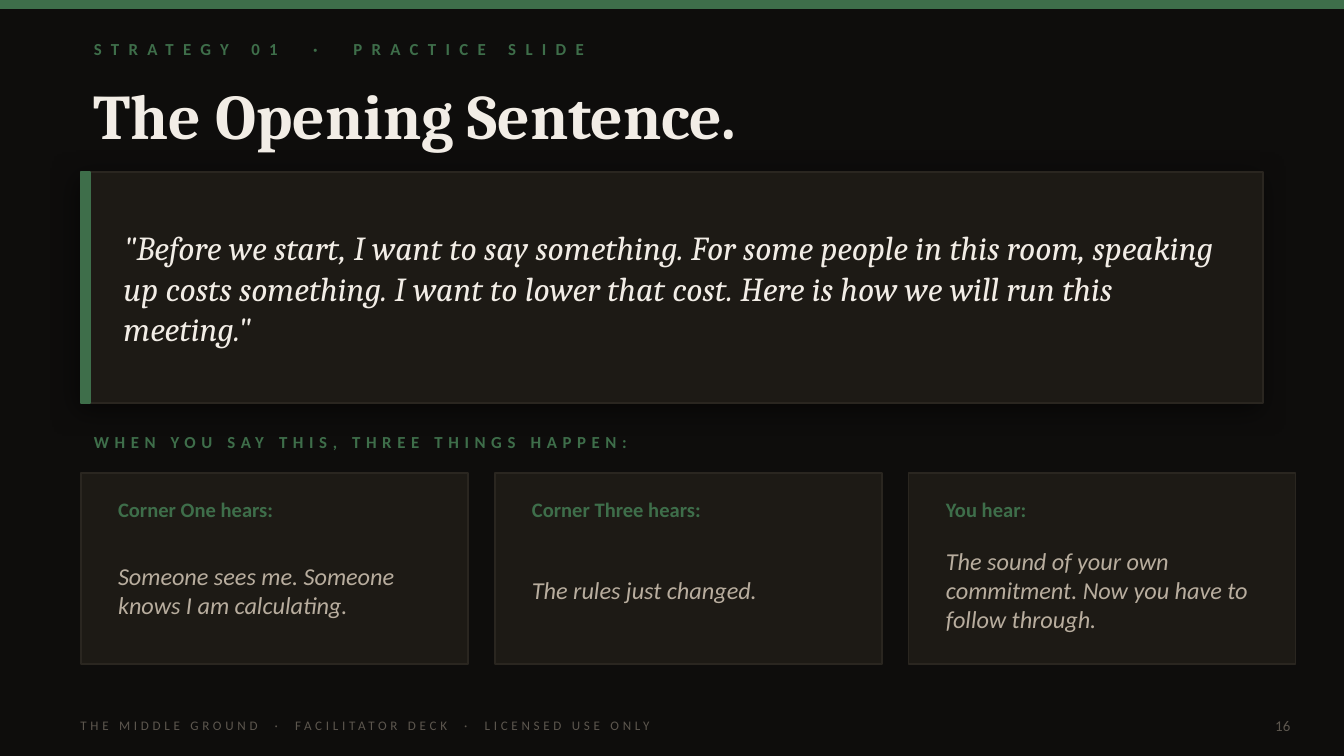
from dataclasses import dataclass

import pptx
import pptx.dml.color
import pptx.enum.shapes
import pptx.enum.text
import pptx.oxml
import pptx.oxml.ns
import pptx.util

Inches = pptx.util.Inches
Pt = pptx.util.Pt
RGB = pptx.dml.color.RGBColor.from_string
Align = pptx.enum.text.PP_ALIGN


@dataclass(frozen=True)
class Theme:
    background: str = "0E0D0C"
    panel: str = "1D1A15"
    border: str = "2A2620"
    accent: str = "3E6E4A"
    ink: str = "F2EDE6"
    muted: str = "B8AD9E"
    faint: str = "5C564E"
    heading_font: str = "Cambria"
    body_font: str = "Calibri"
    title_size: int = 34
    quote_size: int = 18
    reaction_size: int = 13
    listener_size: int = 11
    label_size: int = 9
    page_number_size: int = 8
    footer_size: int = 7


THEME = Theme()
PAGE_WIDTH = 10
MARGIN = 0.6
CONTENT_WIDTH = 8.8
QUOTE_TOP, QUOTE_HEIGHT = 1.28, 1.72
CARD_TOP, CARD_WIDTH, CARD_HEIGHT, CARD_GAP = 3.52, 2.88, 1.42, 0.2
CARD_PADDING, CARD_TEXT_WIDTH = 0.18, 2.55

QUOTE = (
    '"Before we start, I want to say something. For some people in this room, '
    "speaking up costs something. I want to lower that cost. "
    'Here is how we will run this meeting."'
)
REACTIONS = [
    ("Corner One hears:", "Someone sees me. Someone knows I am calculating."),
    ("Corner Three hears:", "The rules just changed."),
    ("You hear:", "The sound of your own commitment. Now you have to follow through."),
]


def add_text(page, text, left, top, width, height, *, size, color,
             font=THEME.body_font, bold=False, italic=False, spacing=0,
             align=Align.LEFT):
    """Add a vertically centred text box; spacing is letter spacing in points."""
    box = page.shapes.add_textbox(Inches(left), Inches(top), Inches(width), Inches(height))
    frame = box.text_frame
    frame.word_wrap = True
    frame.vertical_anchor = pptx.enum.text.MSO_ANCHOR.MIDDLE
    para = frame.paragraphs[0]
    para.alignment = align
    span = para.add_run()
    span.text = text
    span.font.name = font
    span.font.size = Pt(size)
    span.font.bold = bold
    span.font.italic = italic
    span.font.color.rgb = RGB(color)
    if spacing:
        span.font._element.set("spc", str(spacing * 100))


def add_panel(page, left, top, width, height, fill, line):
    panel = page.shapes.add_shape(
        pptx.enum.shapes.MSO_SHAPE.RECTANGLE,
        Inches(left), Inches(top), Inches(width), Inches(height))
    panel.shadow.inherit = False
    panel.fill.solid()
    panel.fill.fore_color.rgb = RGB(fill)
    panel.line.color.rgb = RGB(line)
    panel.line.width = Pt(1)
    return panel


def cast_shadow(panel):
    """Fill the panel's empty effect list with a soft black shadow."""
    effects = panel._element.spPr.find(pptx.oxml.ns.qn("a:effectLst"))
    effects.append(pptx.oxml.parse_xml(
        f'<a:outerShdw {pptx.oxml.ns.nsdecls("a")} blurRad="{Pt(14)}" dist="{Pt(4)}" '
        f'dir="{135 * 60000}" algn="bl" rotWithShape="0">'
        '<a:srgbClr val="000000"><a:alpha val="50000"/></a:srgbClr></a:outerShdw>'))


def add_label(page, text, top, height, spacing):
    add_text(page, text, MARGIN, top, CONTENT_WIDTH, height, size=THEME.label_size,
             color=THEME.accent, bold=True, spacing=spacing)


def add_header(page):
    add_panel(page, 0, 0, PAGE_WIDTH, 0.06, THEME.accent, THEME.accent)
    add_label(page, "STRATEGY 01  ·  PRACTICE SLIDE", 0.2, 0.32, 5)
    add_text(page, "The Opening Sentence.", MARGIN, 0.55, CONTENT_WIDTH, 0.6,
             size=THEME.title_size, color=THEME.ink, font=THEME.heading_font, bold=True)


def add_quote(page):
    panel = add_panel(page, MARGIN, QUOTE_TOP, CONTENT_WIDTH, QUOTE_HEIGHT,
                      THEME.panel, THEME.border)
    cast_shadow(panel)
    add_panel(page, MARGIN, QUOTE_TOP, 0.07, QUOTE_HEIGHT, THEME.accent, THEME.accent)
    add_text(page, QUOTE, 0.82, QUOTE_TOP + 0.12, 8.38, QUOTE_HEIGHT - 0.24,
             size=THEME.quote_size, color=THEME.ink, font=THEME.heading_font, italic=True)


def add_reaction_card(page, left, listener, reaction):
    add_panel(page, left, CARD_TOP, CARD_WIDTH, CARD_HEIGHT, THEME.panel, THEME.border)
    text_left = left + CARD_PADDING
    add_text(page, listener, text_left, CARD_TOP + 0.12, CARD_TEXT_WIDTH, 0.3,
             size=THEME.listener_size, color=THEME.accent, bold=True)
    add_text(page, reaction, text_left, CARD_TOP + 0.46, CARD_TEXT_WIDTH, 0.82,
             size=THEME.reaction_size, color=THEME.muted, italic=True)


def add_footer(page):
    add_text(page, "THE MIDDLE GROUND  ·  FACILITATOR DECK  ·  LICENSED USE ONLY",
             0.5, 5.3, 7.5, 0.2, size=THEME.footer_size, color=THEME.faint, spacing=2)
    add_text(page, "16", 9.1, 5.3, 0.6, 0.2, size=THEME.page_number_size,
             color=THEME.faint, align=Align.RIGHT)


def main():
    deck = pptx.Presentation()
    deck.slide_width = Inches(PAGE_WIDTH)
    deck.slide_height = Inches(PAGE_WIDTH * 9 / 16)
    page = deck.slides.add_slide(deck.slide_layouts[6])
    page.background.fill.solid()
    page.background.fill.fore_color.rgb = RGB(THEME.background)

    add_header(page)
    add_quote(page)
    add_label(page, "WHEN YOU SAY THIS, THREE THINGS HAPPEN:", 3.15, 0.28, 3)
    for column, (listener, reaction) in enumerate(REACTIONS):
        add_reaction_card(page, MARGIN + column * (CARD_WIDTH + CARD_GAP), listener, reaction)
    add_footer(page)
    deck.save("out.pptx")


if __name__ == "__main__":
    main()
